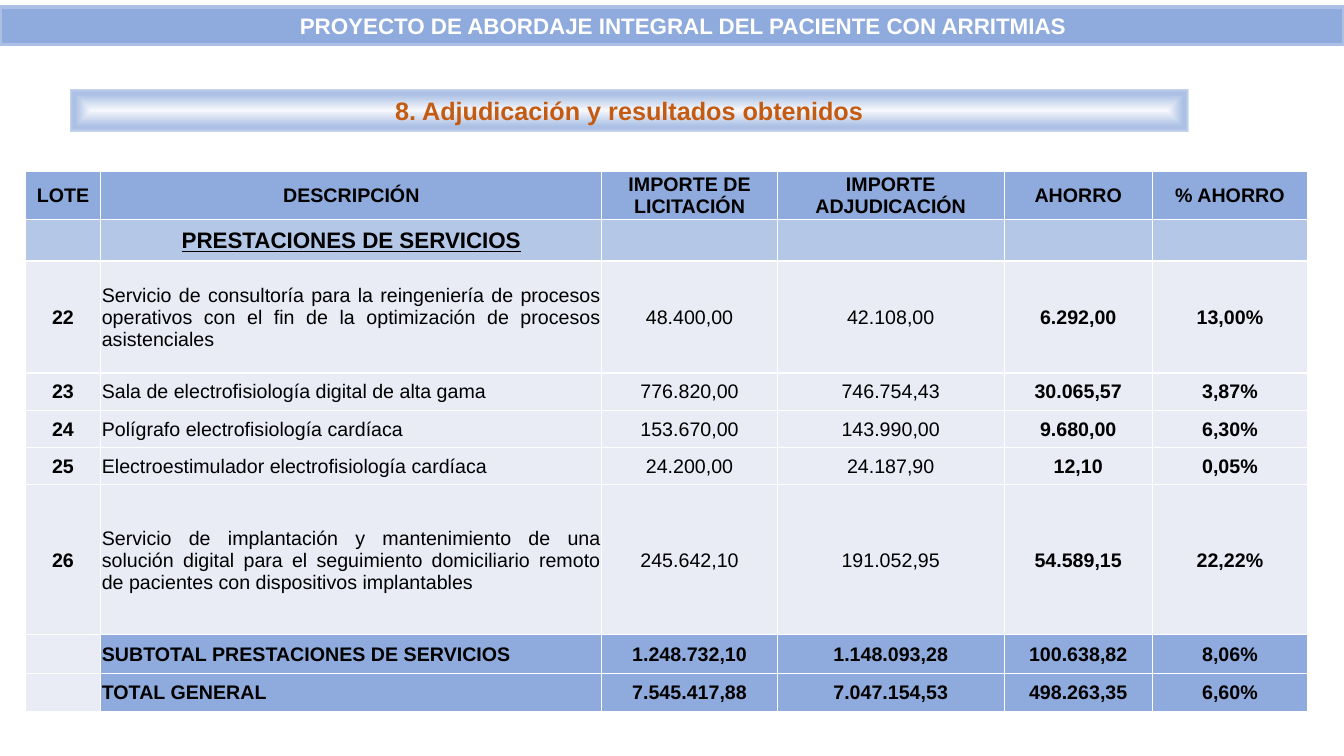
from dataclasses import dataclass

from lxml.etree import SubElement
from pptx import Presentation
from pptx.dml.color import RGBColor as RGB
from pptx.enum.shapes import MSO_SHAPE as SHAPE
from pptx.enum.text import MSO_ANCHOR as ANCHOR, MSO_AUTO_SIZE as AUTOSIZE, PP_ALIGN as ALIGN
from pptx.oxml.ns import qn
from pptx.util import Inches, Pt


@dataclass(frozen=True)
class Theme:
    font: str = "Arial"
    strong: str = "8FAADC"
    medium: str = "B4C7E7"
    pale: str = "E9EBF5"
    edge: str = "ABC0E4"
    accent: str = "C55A11"
    white: str = "FFFFFF"
    black: str = "000000"
    heading_size: int = 18
    banner_size: int = 16
    cell_size: int = 14
    glow: tuple = ((0, "F6F8FC"), (74, "ABC0E4"), (83, "ABC0E4"), (100, "C7D5ED"))


@dataclass(frozen=True)
class Box:
    left: float
    top: float
    width: float
    height: float

    def emu(self):
        return [Inches(v) for v in (self.left, self.top, self.width, self.height)]


THEME = Theme()
SLIDE_W, SLIDE_H = 13.33, 7.5
COLUMN_WIDTHS = (0.75, 4.97, 1.74, 2.25, 1.47, 1.54)
HEADERS = ("LOTE", "DESCRIPCIÓN", "IMPORTE DE LICITACIÓN",
           "IMPORTE ADJUDICACIÓN", "AHORRO", "% AHORRO")
# Each row: kind, height, cell texts
ROWS = (
    ("header", 0.48, HEADERS),
    ("group", 0.41, ("", "PRESTACIONES DE SERVICIOS", "", "", "", "")),
    ("lot", 1.11, ("22", "Servicio de consultoría para la reingeniería de procesos operativos "
                   "con el fin de la optimización de procesos asistenciales",
                   "48.400,00", "42.108,00", "6.292,00", "13,00%")),
    ("lot", 0.37, ("23", "Sala de electrofisiología digital de alta gama",
                   "776.820,00", "746.754,43", "30.065,57", "3,87%")),
    ("lot", 0.37, ("24", "Polígrafo electrofisiología cardíaca",
                   "153.670,00", "143.990,00", "9.680,00", "6,30%")),
    ("lot", 0.37, ("25", "Electroestimulador electrofisiología cardíaca",
                   "24.200,00", "24.187,90", "12,10", "0,05%")),
    ("lot", 1.49, ("26", "Servicio de implantación y mantenimiento de una solución digital para "
                   "el seguimiento domiciliario remoto de pacientes con dispositivos implantables",
                   "245.642,10", "191.052,95", "54.589,15", "22,22%")),
    ("total", 0.38, ("", "SUBTOTAL PRESTACIONES DE SERVICIOS",
                     "1.248.732,10", "1.148.093,28", "100.638,82", "8,06%")),
    ("total", 0.38, ("", "TOTAL GENERAL",
                     "7.545.417,88", "7.047.154,53", "498.263,35", "6,60%")),
)
ROW_FILLS = {"header": THEME.strong, "group": THEME.medium,
             "lot": THEME.pale, "total": THEME.strong}
DESCRIPTION_ALIGN = {"lot": ALIGN.JUSTIFY, "total": ALIGN.LEFT}


def style_paragraph(p, size, color, bold=True, align=ALIGN.CENTER):
    p.alignment = align
    p.font.name = THEME.font
    p.font.size = Pt(size)
    p.font.bold = bold
    p.font.color.rgb = RGB.from_string(color)


def fill_glow(sp):
    """Give the shape a gradient that runs from its centre to its edges."""
    grad = SubElement(sp._element.spPr, qn("a:gradFill"), rotWithShape="1")
    stops = SubElement(grad, qn("a:gsLst"))
    for percent, color in THEME.glow:
        stop = SubElement(stops, qn("a:gs"), pos=str(percent * 1000))
        SubElement(stop, qn("a:srgbClr"), val=color)
    shade = SubElement(grad, qn("a:path"), path="shape")
    SubElement(shade, qn("a:fillToRect"), l="50000", t="50000", r="50000", b="50000")


def add_heading(slide, box):
    title = slide.shapes.title
    title.left, title.top, title.width, title.height = box.emu()
    fill_glow(title)
    tf = title.text_frame
    tf.text = "8. Adjudicación y resultados obtenidos"
    tf.auto_size = AUTOSIZE.NONE
    tf.vertical_anchor = ANCHOR.MIDDLE
    style_paragraph(tf.paragraphs[0], THEME.heading_size, THEME.accent)


def add_award_table(slide, box):
    table = slide.shapes.add_table(len(ROWS), len(COLUMN_WIDTHS), *box.emu()).table
    table.first_row = table.horz_banding = False
    for column, width in zip(table.columns, COLUMN_WIDTHS):
        column.width = Inches(width)
    for r, (kind, height, texts) in enumerate(ROWS):
        table.rows[r].height = Inches(height)
        for c, text in enumerate(texts):
            fill_cell(table.cell(r, c), kind, c, text)


def fill_cell(cell, kind, column, text):
    # The lot column stays pale beside the totals
    pale = kind == "total" and column == 0
    cell.fill.solid()
    cell.fill.fore_color.rgb = RGB.from_string(THEME.pale if pale else ROW_FILLS[kind])
    cell.vertical_anchor = ANCHOR.MIDDLE
    cell.margin_left = cell.margin_right = cell.margin_top = Inches(0.01)
    cell.margin_bottom = 0
    cell.text = text
    p = cell.text_frame.paragraphs[0]
    group_name = kind == "group" and column == 1
    size = THEME.banner_size if group_name else THEME.cell_size
    bold = kind != "lot" or column not in (1, 2, 3)
    align = DESCRIPTION_ALIGN.get(kind, ALIGN.CENTER) if column == 1 else ALIGN.CENTER
    style_paragraph(p, size, THEME.black, bold, align)
    if group_name:
        p.font.underline = True


def add_banner(slide, box):
    sp = slide.shapes.add_shape(SHAPE.RECTANGLE, *box.emu())
    sp.shadow.inherit = False
    sp.fill.solid()
    sp.fill.fore_color.rgb = RGB.from_string(THEME.strong)
    sp.line.color.rgb = RGB.from_string(THEME.edge)
    sp.line.width = Pt(2.25)
    tf = sp.text_frame
    tf.word_wrap = True
    tf.vertical_anchor = ANCHOR.MIDDLE
    tf.margin_left = Inches(0.32)
    tf.text = "PROYECTO DE ABORDAJE INTEGRAL DEL PACIENTE CON ARRITMIAS"
    style_paragraph(tf.paragraphs[0], THEME.banner_size, THEME.white)


def main():
    prs = Presentation()
    prs.slide_width, prs.slide_height = Inches(SLIDE_W), Inches(SLIDE_H)
    slide = prs.slides.add_slide(prs.slide_layouts[5])
    table_height = sum(height for _, height, _ in ROWS)
    add_heading(slide, Box(0.69, 0.88, 11.1, 0.43))
    add_award_table(slide, Box(0.25, 1.7, sum(COLUMN_WIDTHS), table_height))
    add_banner(slide, Box(0, 0.07, SLIDE_W, 0.37))
    prs.save("out.pptx")


if __name__ == "__main__":
    main()
